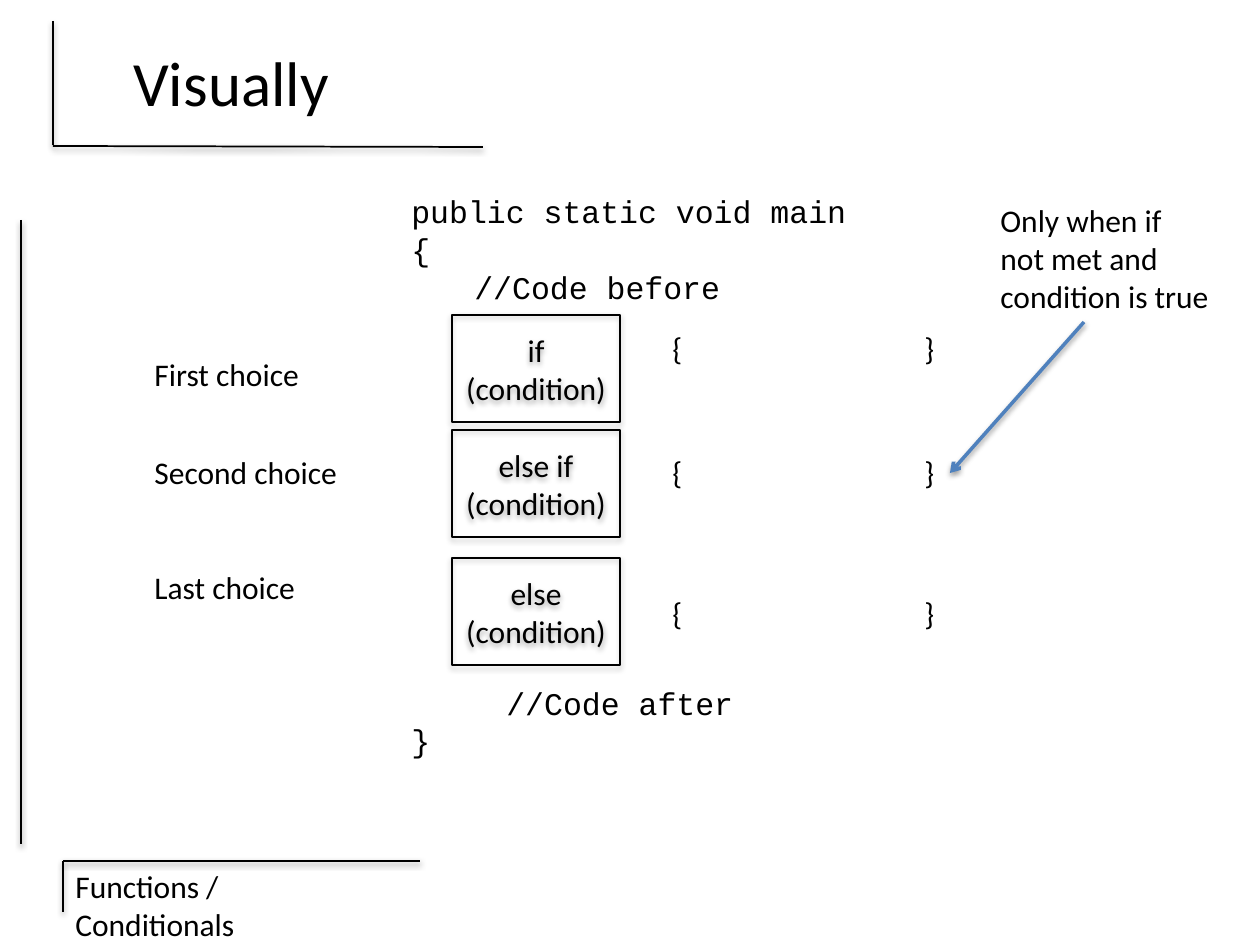
import pptx
import pptx.util
import pptx.dml.color
import pptx.enum.shapes
import pptx.enum.text
import pptx.oxml
import pptx.oxml.ns

PX = 914400 / 126
COLORS = {"ink": "000000", "arrow": "4F81BD"}
ALIGN = pptx.enum.text.PP_ALIGN
ANCHOR = pptx.enum.text.MSO_ANCHOR


def emu(px):
    """Turn pixels into EMU."""
    return pptx.util.Emu(round(px * PX))


def rgb(name):
    """Look up a named colour."""
    return pptx.dml.color.RGBColor.from_string(COLORS[name])


def add_xml(parent, xml):
    """Append a DrawingML element to parent."""
    ns = pptx.oxml.ns.nsdecls("a")
    parent.append(pptx.oxml.parse_xml(xml.replace(" ", f" {ns} ", 1)))


def add_shadow(s, dist=20000, alpha=38):
    """Give a shape or connector a soft shadow straight below."""
    add_xml(s._element.spPr, f'<a:effectLst ><a:outerShdw blurRad="40000" dist="{dist}" '
            f'dir="5400000" rotWithShape="0"><a:srgbClr val="{COLORS["ink"]}">'
            f'<a:alpha val="{alpha}000"/></a:srgbClr></a:outerShdw></a:effectLst>')


def write(tf, text, size=18, font="Calibri", align=ALIGN.LEFT, anchor=ANCHOR.TOP):
    """Fill a text frame, one paragraph per line of text."""
    tf.word_wrap = True
    tf.vertical_anchor = anchor
    for i, line in enumerate(text.split("\n")):
        p = tf.add_paragraph() if i else tf.paragraphs[0]
        p.alignment = align
        r = p.add_run()
        r.text = line
        r.font.size = pptx.util.Pt(size)
        r.font.name = font
        r.font.color.rgb = rgb("ink")
    return tf


def add_text(slide, x, y, w, h, text, **fmt):
    """Add a text box and return its frame."""
    s = slide.shapes.add_textbox(emu(x), emu(y), emu(w), emu(h))
    return write(s.text_frame, text, **fmt)


def add_line(slide, x1, y1, x2, y2, color="ink", width=1):
    """Add a straight shadowed line."""
    s = slide.shapes.add_connector(pptx.enum.shapes.MSO_CONNECTOR.STRAIGHT,
                                   emu(x1), emu(y1), emu(x2), emu(y2))
    s.line.color.rgb = rgb(color)
    s.line.width = pptx.util.Pt(width)
    add_shadow(s)
    return s


def add_title(slide, x, y, w, h):
    """Place the title inside its corner rule."""
    add_line(slide, x + w, y + h, x, y + h - 1)
    add_line(slide, x, y, x, y + h - 2)
    add_text(slide, x + 10, y, 336, 120, "Visually", size=36,
             align=ALIGN.CENTER, anchor=ANCHOR.MIDDLE)


def add_footer(slide, x, y, w, h):
    """Place the footer under its corner rule."""
    add_line(slide, x + w, y, x, y)
    add_line(slide, x, y, x, y + h)
    add_text(slide, x, y, 305, 89, "Functions / Conditionals")


def add_choice(slide, x, y, w, h, label, keyword, label_dy, brace_dy):
    """Place one branch: its label, condition box and braces."""
    add_text(slide, x, y + label_dy, 210, 50, label)
    s = slide.shapes.add_shape(pptx.enum.shapes.MSO_SHAPE.RECTANGLE,
                               emu(x + 310), emu(y), emu(168), emu(h))
    s.fill.background()
    s.line.color.rgb = rgb("ink")
    s.line.width = pptx.util.Pt(0.75)
    add_shadow(s, dist=23000, alpha=35)
    write(s.text_frame, f"{keyword} (condition)", align=ALIGN.CENTER, anchor=ANCHOR.MIDDLE)
    tf = add_text(slide, x + 518, y + brace_dy, w - 518, 50, "{\t}")
    add_xml(tf.paragraphs[0]._p.get_or_add_pPr(),
            f'<a:tabLst ><a:tab pos="{emu(252)}" algn="l"/></a:tabLst>')


def add_code(slide, x, y, w, h):
    """Place the method that surrounds the branches."""
    code = "public static void main\n{\n//Code before\n//Code after\n}"
    tf = add_text(slide, x, y, w, h, code, font="Courier New")
    for p in tf.paragraphs:
        p.line_spacing = pptx.util.Pt(21.6)
    before, after = tf.paragraphs[2:4]
    before._p.get_or_add_pPr().set("marL", str(emu(63)))
    after._p.get_or_add_pPr().set("marL", str(emu(95)))
    after.space_before = pptx.util.Pt(216)


def add_note(slide, x, y, w, h):
    """Place the remark and its arrow to the second branch."""
    add_text(slide, x, y, w, h, "Only when if\nnot met and\ncondition is true")
    s = add_line(slide, x + 96, y + h, x - 38, y + h + 151, color="arrow", width=2)
    add_xml(s.line._get_or_add_ln(), '<a:tailEnd type="arrow"/>')


def main():
    """Build the slide and save it."""
    prs = pptx.Presentation()
    prs.slide_width, prs.slide_height = emu(1260), emu(945)
    slide = prs.slides.add_slide(prs.slide_layouts[6])
    add_line(slide, 21, 220, 21, 844)
    add_footer(slide, 63, 861, 357, 51)
    add_title(slide, 53, 21, 430, 126)
    choices = [(315, "First choice", "if", 34, 8),
               (430, "Second choice", "else if", 17, 17),
               (558, "Last choice", "else", 4, 30)]
    for y, label, keyword, label_dy, brace_dy in choices:
        add_choice(slide, 142, y, 809, 107, label, keyword, label_dy, brace_dy)
    add_code(slide, 399, 186, 465, 585)
    add_note(slide, 988, 195, 236, 127)
    prs.save("out.pptx")


if __name__ == "__main__":
    main()
